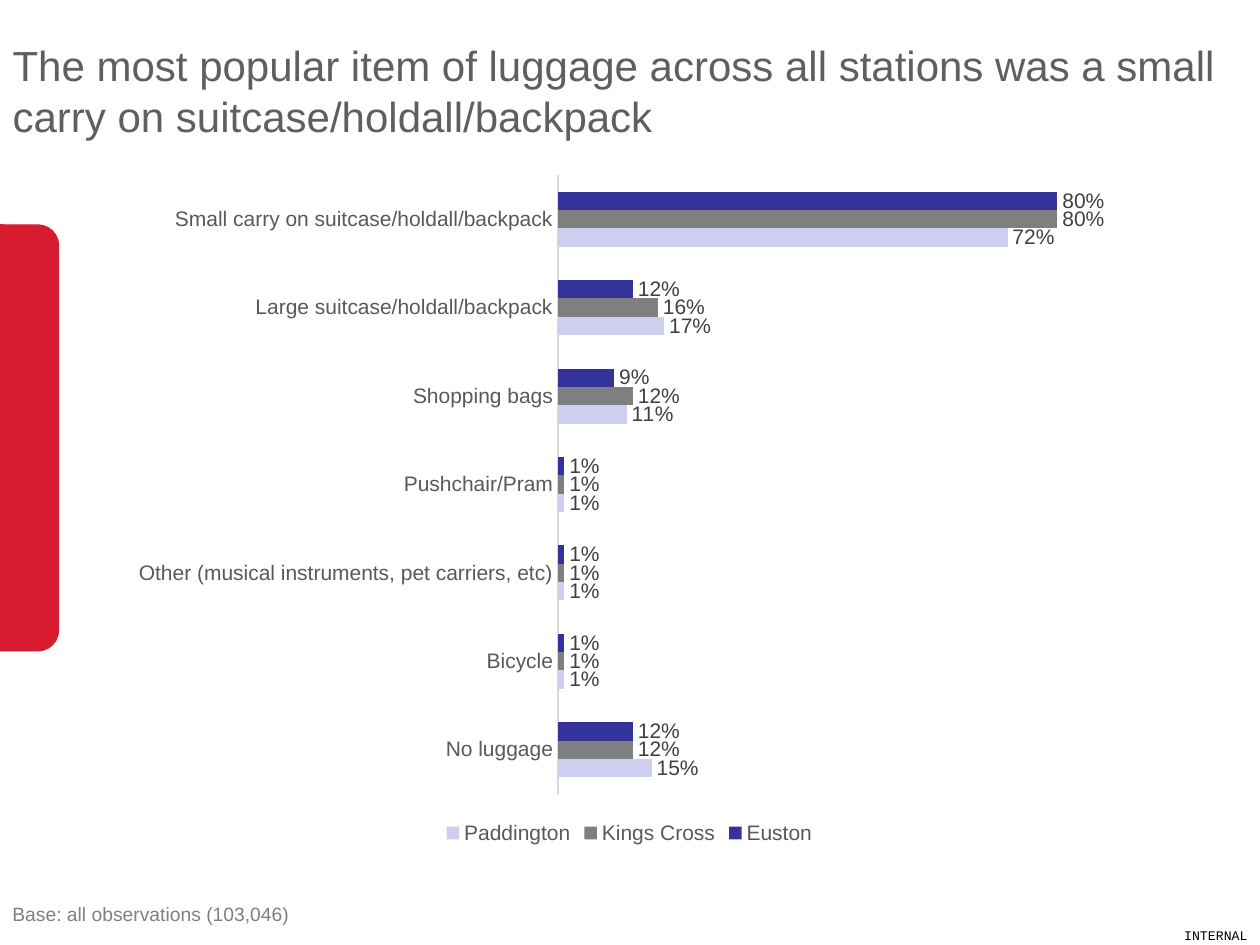
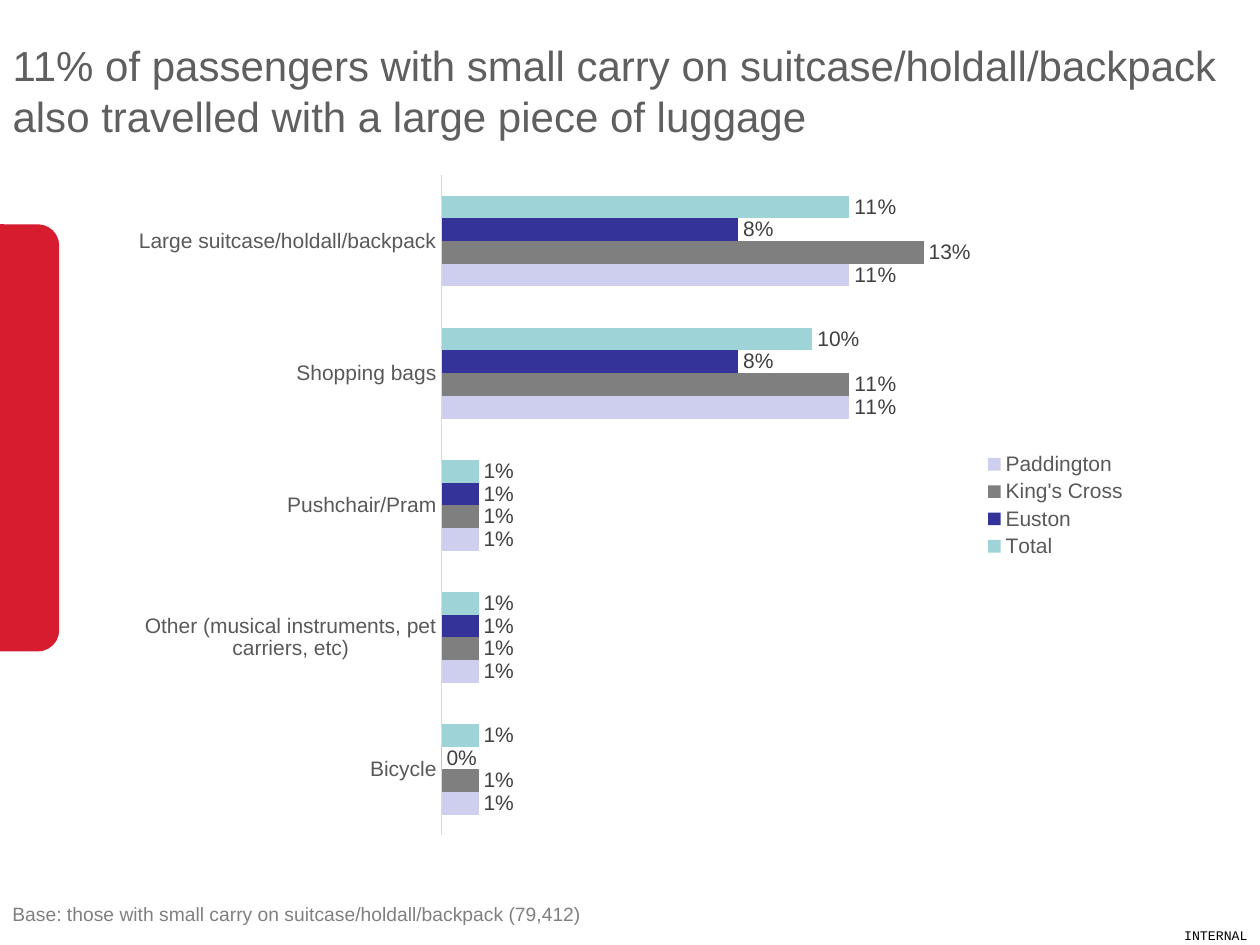
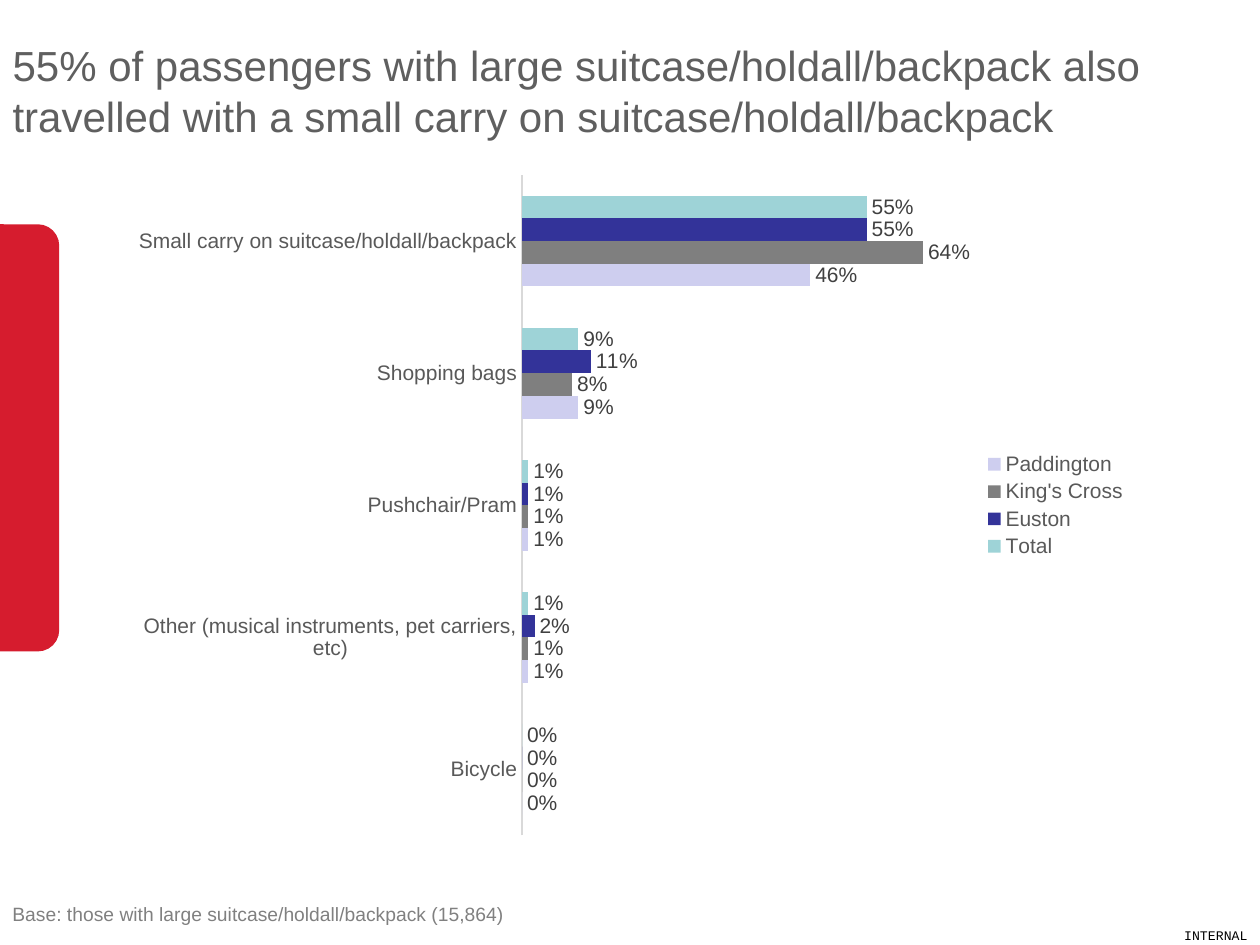
from dataclasses import dataclass
from typing import NamedTuple

from pptx import Presentation
from pptx.chart.data import CategoryChartData
from pptx.dml.color import RGBColor
from pptx.enum.chart import XL_CHART_TYPE as ChartType
from pptx.enum.chart import XL_LABEL_POSITION as LabelPosition
from pptx.enum.chart import XL_LEGEND_POSITION as LegendPosition
from pptx.enum.chart import XL_TICK_LABEL_POSITION as TickLabelPosition
from pptx.enum.chart import XL_TICK_MARK as TickMark
from pptx.enum.shapes import MSO_SHAPE as Preset
from pptx.enum.text import MSO_ANCHOR as Anchor
from pptx.enum.text import MSO_AUTO_SIZE as AutoSize
from pptx.enum.text import PP_ALIGN as Align
from pptx.util import Inches, Pt


@dataclass(frozen=True)
class Theme:
    body_font: str = "Arial"
    marking_font: str = "Courier New"
    title_size: float = 24
    label_size: float = 12
    base_size: float = 11
    chart_size: float = 10
    marking_size: float = 7.5
    title: str = "5F5F5F"
    base: str = "808080"
    axis_text: str = "595959"
    axis_line: str = "D9D9D9"
    data_label: str = "404040"
    black: str = "000000"
    tab: str = "D61C2E"
    euston: str = "333399"
    kings_cross: str = "7F7F7F"
    paddington: str = "CECEEF"
    total: str = "9ED3D7"


class Box(NamedTuple):
    left: int
    top: int
    width: int
    height: int


def share(box, left, top, width, height):
    return Box(
        int(box.left + box.width * left / 100),
        int(box.top + box.height * top / 100),
        int(box.width * width / 100),
        int(box.height * height / 100),
    )


THEME = Theme()
PAGE = Box(0, 0, Inches(10), Inches(7.5))

SMALL = "Small carry on suitcase/holdall/backpack"
LARGE = "Large suitcase/holdall/backpack"
BAGS = "Shopping bags"
PRAM = "Pushchair/Pram"
OTHER = "Other (musical instruments, pet carriers, etc)"
BICYCLE = "Bicycle"
NO_LUGGAGE = "No luggage"

STATION_COLORS = {
    "Total": THEME.total,
    "Euston": THEME.euston,
    "Kings Cross": THEME.kings_cross,
    "King's Cross": THEME.kings_cross,
    "Paddington": THEME.paddington,
}

SLIDES = [
    {
        "title": "The most popular item of luggage across all stations was a small "
                 "carry on suitcase/holdall/backpack",
        "base": "Base: all observations (103,046)",
        "categories": [SMALL, LARGE, BAGS, PRAM, OTHER, BICYCLE, NO_LUGGAGE],
        "percentages": {
            "Euston": [80, 12, 9, 1, 1, 1, 12],
            "Kings Cross": [80, 16, 12, 1, 1, 1, 12],
            "Paddington": [72, 17, 11, 1, 1, 1, 15],
        },
        "legend": LegendPosition.BOTTOM,
        "maximum": 0.9,
    },
    {
        "title": "11% of passengers with small carry on suitcase/holdall/backpack "
                 "also travelled with a large piece of luggage",
        "base": "Base: those with small carry on suitcase/holdall/backpack (79,412)",
        "categories": [LARGE, BAGS, PRAM, OTHER, BICYCLE],
        "percentages": {
            "Total": [11, 10, 1, 1, 1],
            "Euston": [8, 8, 1, 1, 0],
            "King's Cross": [13, 11, 1, 1, 1],
            "Paddington": [11, 11, 1, 1, 1],
        },
        "legend": LegendPosition.RIGHT,
        "maximum": 0.14,
    },
    {
        "title": "55% of passengers with large suitcase/holdall/backpack also "
                 "travelled with a small carry on suitcase/holdall/backpack",
        "base": "Base: those with large suitcase/holdall/backpack (15,864)",
        "categories": [SMALL, BAGS, PRAM, OTHER, BICYCLE],
        "percentages": {
            "Total": [55, 9, 1, 1, 0],
            "Euston": [55, 11, 1, 2, 0],
            "King's Cross": [64, 8, 1, 1, 0],
            "Paddington": [46, 9, 1, 1, 0],
        },
        "legend": LegendPosition.RIGHT,
        "maximum": 0.7,
    },
]


def apply(target, values):
    for name, value in values.items():
        setattr(target, name, value)


def style_font(font, size, color, name=THEME.body_font):
    apply(font, {"name": name, "size": Pt(size), "bold": False})
    font.color.rgb = RGBColor.from_string(color)


def fill_solid(fill, color):
    fill.solid()
    fill.fore_color.rgb = RGBColor.from_string(color)


def write(frame, text, font, align=Align.LEFT, **frame_format):
    apply(frame, frame_format)
    paragraph = frame.paragraphs[0]
    paragraph.alignment = align
    run = paragraph.add_run()
    run.text = text
    style_font(run.font, *font)


def add_tab(slide, box):
    tab = slide.shapes.add_shape(Preset.ROUNDED_RECTANGLE, *box)
    tab.shadow.inherit = False
    tab.line.fill.background()
    fill_solid(tab.fill, THEME.tab)
    return tab


def add_marking(slide, box):
    marking = slide.shapes.add_textbox(*box)
    write(marking.text_frame, "INTERNAL",
          (THEME.marking_size, THEME.black, THEME.marking_font), Align.RIGHT,
          word_wrap=True, auto_size=AutoSize.SHAPE_TO_FIT_TEXT)
    return marking


def move_shared_shapes_to_layout(slide, page):
    shared = [add_tab(slide, share(page, -5.5, 23.73, 10.2, 45.2)),
              add_marking(slide, share(page, 0, 97.47, 100, 3.07))]
    for shape in shared:
        slide.slide_layout.shapes.element.append(shape.element)


def place_title(slide, box, text):
    title = slide.shapes.title
    apply(title, box._asdict())
    write(title.text_frame, text, (THEME.title_size, THEME.title),
          word_wrap=True, auto_size=AutoSize.NONE, vertical_anchor=Anchor.MIDDLE)


def add_base(slide, box, text):
    base = slide.shapes.add_textbox(*box)
    write(base.text_frame, text, (THEME.base_size, THEME.base),
          word_wrap=False, auto_size=AutoSize.SHAPE_TO_FIT_TEXT)


def format_axes(chart, maximum):
    category_axis = chart.category_axis
    apply(category_axis, {
        "reverse_order": True,
        "major_tick_mark": TickMark.NONE,
        "minor_tick_mark": TickMark.NONE,
        "tick_label_position": TickLabelPosition.NEXT_TO_AXIS,
        "has_major_gridlines": False,
    })
    style_font(category_axis.tick_labels.font, THEME.label_size, THEME.axis_text)
    fill_solid(category_axis.format.line.fill, THEME.axis_line)
    category_axis.format.line.width = Pt(0.75)
    apply(chart.value_axis, {
        "visible": False,
        "has_major_gridlines": False,
        "minimum_scale": 0,
        "maximum_scale": maximum,
    })
    apply(chart.value_axis.tick_labels,
          {"number_format": "0.0%", "number_format_is_linked": False})


def format_series(series):
    fill_solid(series.format.fill, STATION_COLORS[series.name])
    series.invert_if_negative = False
    labels = series.data_labels
    apply(labels, {
        "show_value": True,
        "number_format": "0%",
        "number_format_is_linked": False,
        "position": LabelPosition.OUTSIDE_END,
    })
    style_font(labels.font, THEME.label_size, THEME.data_label)


def add_luggage_chart(slide, box, content):
    chart_data = CategoryChartData(number_format="0%")
    chart_data.categories = content["categories"]
    for station, percentages in content["percentages"].items():
        chart_data.add_series(station, [value / 100 for value in percentages])
    chart = slide.shapes.add_chart(ChartType.BAR_CLUSTERED, *box, chart_data).chart
    apply(chart, {"has_title": False, "has_legend": True})
    style_font(chart.font, THEME.chart_size, THEME.black)
    apply(chart.legend, {"position": content["legend"], "include_in_layout": False})
    style_font(chart.legend.font, THEME.label_size, THEME.axis_text)
    plot = chart.plots[0]
    apply(plot, {"gap_width": 182, "overlap": 0, "vary_by_categories": False})
    format_axes(chart, content["maximum"])
    for series in plot.series:
        format_series(series)


def build_chart_slide(slide, page, content):
    place_title(slide, share(page, 0, 2.8, 100, 13.47), content["title"])
    add_luggage_chart(slide, share(page, 9.4, 17.07, 81.1, 72.8), content)
    add_base(slide, share(page, 0, 94.8, 47.4, 3.87), content["base"])


def main():
    presentation = Presentation()
    apply(presentation, {"slide_width": PAGE.width, "slide_height": PAGE.height})
    title_only = presentation.slide_layouts.get_by_name("Title Only")
    slides = [presentation.slides.add_slide(title_only) for _ in SLIDES]
    move_shared_shapes_to_layout(slides[0], PAGE)
    for slide, content in zip(slides, SLIDES):
        build_chart_slide(slide, PAGE, content)
    presentation.save("out.pptx")


if __name__ == "__main__":
    main()
